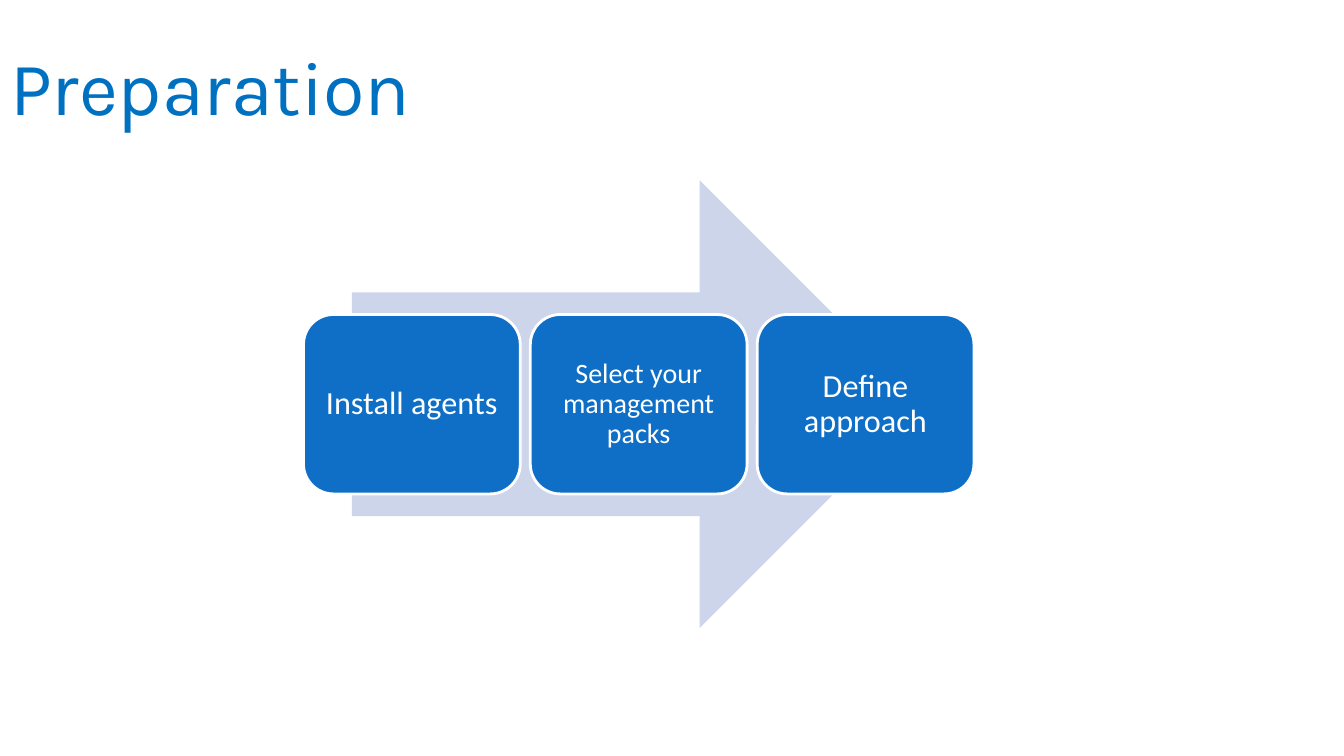
from pptx import Presentation
from pptx.dml.color import RGBColor
from pptx.enum.shapes import MSO_SHAPE as Shape
from pptx.enum.text import MSO_ANCHOR as Anchor, PP_ALIGN as Align
from pptx.util import Inches, Pt

WHITE = RGBColor(0xFF, 0xFF, 0xFF)
TITLE = RGBColor(0x00, 0x70, 0xC0)
BLUE = RGBColor(0x0F, 0x6F, 0xC6)
PALE = RGBColor(0xCC, 0xD5, 0xEA)

STEPS = [
    ("Install agents", 23),
    ("Select your management packs", 20),
    ("Define approach", 23),
]
LEFT, TOP, WIDTH, HEIGHT, PITCH = 3.01, 3.12, 2.15, 1.78, 2.25


def add_run(para, text, size, font, color):
    run = para.add_run()
    run.text = text
    run.font.size = Pt(size)
    run.font.name = font
    run.font.color.rgb = color


def set_title(slide, text):
    title = slide.shapes.title
    title.left, title.top = Inches(0), Inches(0.3)
    title.width, title.height = Inches(12), Inches(1.25)
    frame = title.text_frame
    frame.word_wrap = True
    frame.vertical_anchor = Anchor.MIDDLE
    para = frame.paragraphs[0]
    para.alignment = Align.LEFT
    para.line_spacing = 0.8
    add_run(para, text, 54, "Karla", TITLE)


def add_shape(slide, kind, left, top, width, height, fill):
    shape = slide.shapes.add_shape(
        kind, Inches(left), Inches(top), Inches(width), Inches(height))
    shape.shadow.inherit = False
    shape.fill.solid()
    shape.fill.fore_color.rgb = fill
    shape.line.fill.background()
    return shape


def add_step(slide, left, text, size):
    box = add_shape(slide, Shape.ROUNDED_RECTANGLE, left, TOP, WIDTH, HEIGHT, BLUE)
    box.line.color.rgb = WHITE
    box.line.width = Pt(2)
    frame = box.text_frame
    frame.word_wrap = True
    frame.vertical_anchor = Anchor.MIDDLE
    frame.margin_left = frame.margin_right = Inches(0.09)
    frame.margin_top = frame.margin_bottom = Inches(0.09)
    para = frame.paragraphs[0]
    para.alignment = Align.CENTER
    para.line_spacing = 0.9
    add_run(para, text, size, "Calibri", WHITE)


def main():
    deck = Presentation()
    deck.slide_width, deck.slide_height = Inches(13.33), Inches(7.5)
    slide = deck.slides.add_slide(deck.slide_layouts.get_by_name("Title Only"))
    slide.background.fill.solid()
    slide.background.fill.fore_color.rgb = WHITE
    set_title(slide, "Preparation")
    add_shape(slide, Shape.RIGHT_ARROW, 3.49, 1.79, 5.67, 4.44, PALE)
    for index, (text, size) in enumerate(STEPS):
        add_step(slide, LEFT + index * PITCH, text, size)
    deck.save("out.pptx")


if __name__ == "__main__":
    main()
